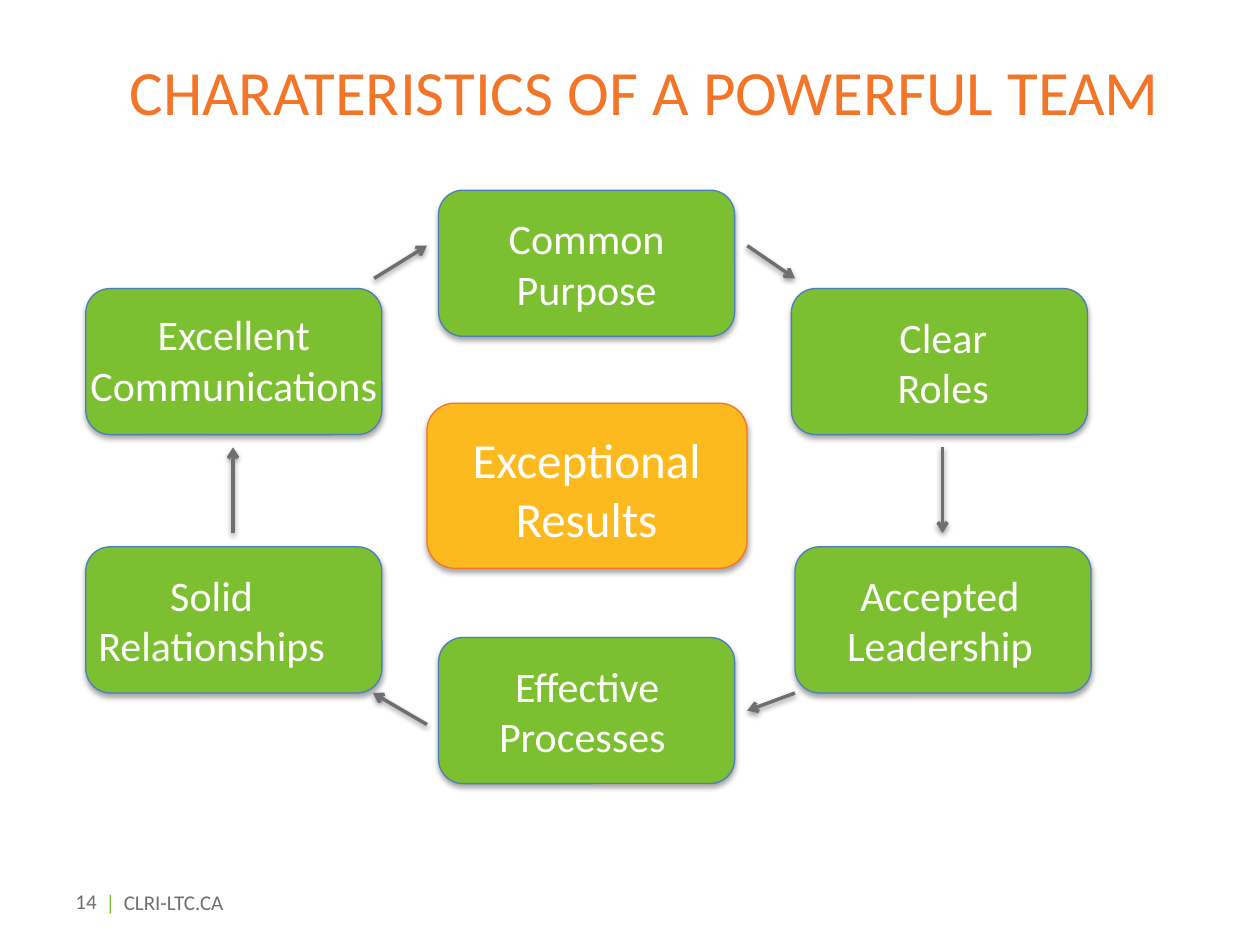
import pptx
import pptx.util
import pptx.dml.color
import pptx.enum.shapes
import pptx.enum.text
import pptx.oxml
import pptx.oxml.ns

Pt = pptx.util.Pt
ALIGN = pptx.enum.text.PP_ALIGN
ANCHOR = pptx.enum.text.MSO_ANCHOR
NS = pptx.oxml.ns.nsdecls("a")
GREEN, BLUE, GOLD = "7CBF30", "4B7EBC", "FDBA1E"
ORANGE, GRAY, WHITE = "F27528", "6E6F72", "FFFFFF"


def color(code):
    return pptx.dml.color.RGBColor.from_string(code)


class Deck:
    font = {"name": "Calibri", "bold": False}

    def __init__(self, wide, high):
        self.file = pptx.Presentation()
        self.file.slide_width, self.file.slide_height = Pt(wide), Pt(high)
        self.slide = self.file.slides.add_slide(self.file.slide_layouts[6])
        self.shapes = self.slide.shapes

    def shade(self, shape, alpha, dist):
        shape._element.spPr.append(pptx.oxml.parse_xml(
            f'<a:effectLst {NS}><a:outerShdw blurRad="{Pt(3.15)}" dist="{Pt(dist)}" '
            f'dir="5400000" rotWithShape="0"><a:srgbClr val="000000">'
            f'<a:alpha val="{alpha * 1000}"/></a:srgbClr></a:outerShdw></a:effectLst>'))

    def text(self, area, runs, size, align=ALIGN.LEFT, anchor=ANCHOR.TOP, tab=None):
        box = self.shapes.add_textbox(*map(Pt, area))
        frame = box.text_frame
        frame.word_wrap, frame.vertical_anchor = True, anchor
        para = frame.paragraphs[0]
        para.alignment = align
        if tab:
            para._p.get_or_add_pPr().append(pptx.oxml.parse_xml(
                f'<a:tabLst {NS}><a:tab pos="{Pt(tab)}" algn="l"/></a:tabLst>'))
        for words, code in runs:
            run = para.add_run()
            run.text = words
            for key, value in {**self.font, "size": Pt(size)}.items():
                setattr(run.font, key, value)
            run.font.color.rgb = color(code)
        return box

    def box(self, area, fill, edge):
        kind = pptx.enum.shapes.MSO_SHAPE.ROUNDED_RECTANGLE
        shape = self.shapes.add_shape(kind, *map(Pt, area))
        shape.fill.solid()
        shape.fill.fore_color.rgb = color(fill)
        shape.line.color.rgb = color(edge)
        shape.line.width = Pt(0.75)
        self.shade(shape, 35, 1.8)
        return shape

    def card(self, area, label, inner, size=24, fill=GREEN, edge=BLUE):
        parts = [self.box(area, fill, edge),
                 self.text(inner, [(label, WHITE)], size, ALIGN.CENTER)]
        self.shapes.add_group_shape(parts)

    def arrow(self, start, end):
        kind = pptx.enum.shapes.MSO_CONNECTOR.STRAIGHT
        line = self.shapes.add_connector(kind, *map(Pt, start + end))
        line.line.color.rgb = color(GRAY)
        line.line.width = Pt(2)
        line.line._get_or_add_ln().append(
            pptx.oxml.parse_xml(f'<a:tailEnd {NS} type="arrow"/>'))
        self.shade(line, 38, 1.6)


def main():
    deck = Deck(720, 540)

    # Footer and title
    deck.text((36, 500.4, 61.2, 28.8), [("14", GRAY)], 12, anchor=ANCHOR.MIDDLE)
    deck.text((53.3, 504.7, 218.2, 21.6),
              [("|", GREEN), ("\tCLRI-LTC.CA", GRAY)], 12, tab=10.4)
    deck.text((67, 26.6, 635.8, 51.1),
              [("CHARATERISTICS OF A POWERFUL TEAM", ORANGE)], 36)

    # Ring of traits: box left and top, label, text left, top and width
    ring = [
        (250.6, 108.7, "Common Purpose", 283, 118.1, 104.4),
        (49, 164.9, "Excellent Communications", 29.5, 172.8, 208.1),
        (49, 312.5, "Solid Relationships", 29.5, 321.8, 182.9),
        (250.6, 364.3, "Effective Processes ", 259.2, 373.7, 152.6),
        (454.3, 312.5, "Accepted Leadership", 450.7, 321.8, 172.8),
        (452.2, 164.9, "Clear Roles", 488.2, 174.2, 101.5),
    ]
    for left, top, label, x, y, wide in ring:
        deck.card((left, top, 169.2, 83.5), label, (x, y, wide, 65.5))

    # Outcome in the centre
    deck.card((244, 230.4, 182.9, 94.3), "Exceptional Results",
              (236.9, 241.9, 196.6, 74.9), 28, GOLD, ORANGE)

    # Clockwise arrows
    for start, end in [
        ((427, 140.4), (454.3, 159.1)),
        ((538.6, 255.6), (538.6, 304.6)),
        ((454.3, 396), (427, 406.1)),
        ((244, 414), (213.1, 396)),
        ((133.2, 304.6), (133.2, 255.6)),
        ((213.8, 159.1), (244, 140.4)),
    ]:
        deck.arrow(start, end)

    deck.file.save("out.pptx")


if __name__ == "__main__":
    main()
